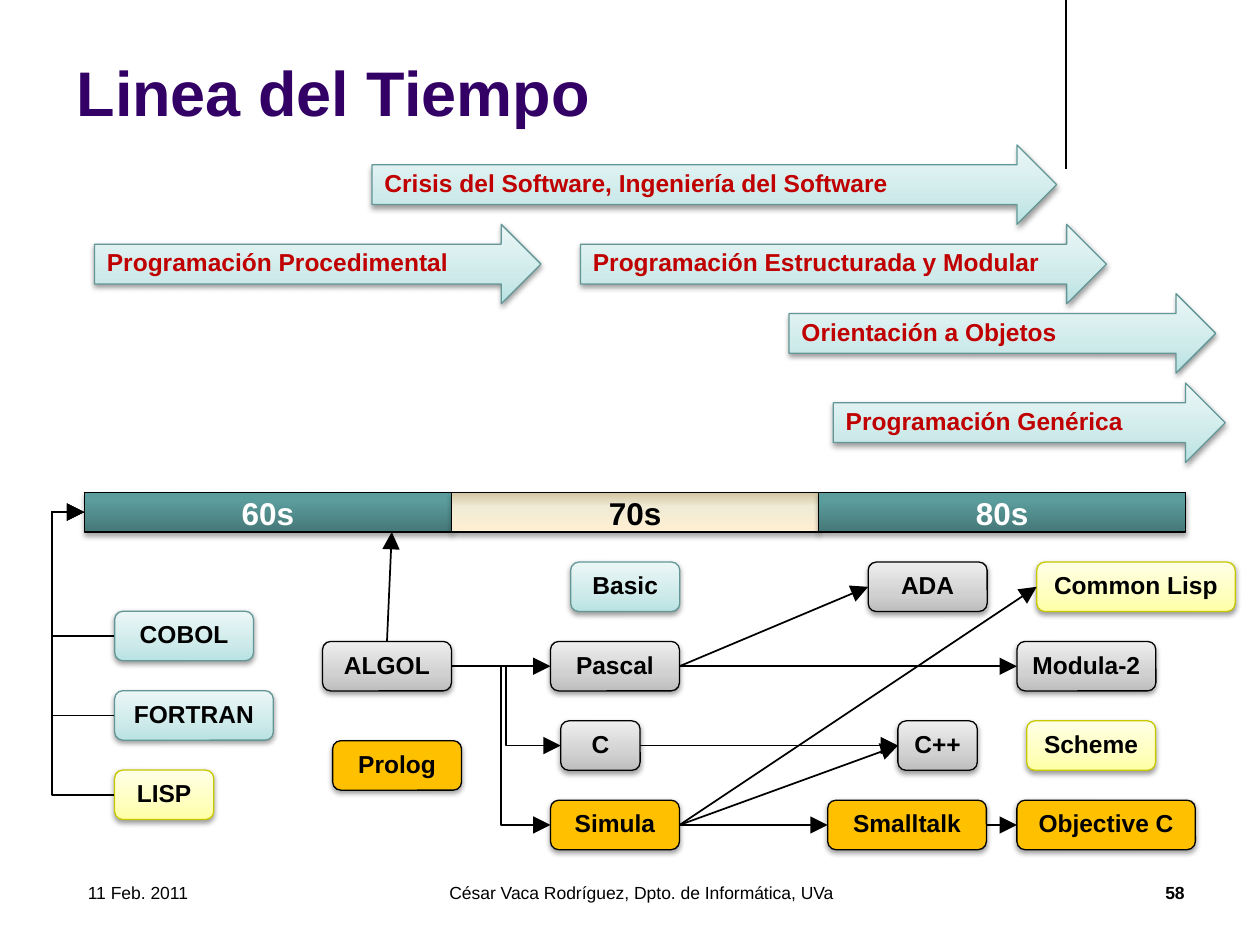
from copy import deepcopy

from pptx import Presentation
from pptx.dml.color import RGBColor
from pptx.enum.shapes import MSO_CONNECTOR as Link, MSO_SHAPE as Shape
from pptx.enum.text import MSO_ANCHOR as Anchor, PP_ALIGN as Align
from pptx.oxml.ns import qn
from pptx.oxml.xmlchemy import OxmlElement
from pptx.util import Pt

TOP, LEFT, BOTTOM, RIGHT = range(4)
TEAL = ([(0, "B9E2E2"), (0.35, "CEEAEA"), (1, "ECF7F7")], "639797")
GRAY = ([(0, "BDBDBD"), (0.35, "D1D1D1"), (1, "EEEEEE")], "000000")
YELLOW = ([(0, "FFFFA5"), (0.35, "FFFFBF"), (1, "FFFFE7")], "C8C800")
ORANGE = ("FFC000", "000000")
DARK_TEAL = ([(0, "467878"), (0.8, "5B9C9C"), (1, "5B9E9E")], "000000")
CREAM = ([(0, "FFEFD1"), (0.65, "F0EBD5"), (1, "D1C39F")], "000000")

PARADIGMS = [
    ("Crisis del Software, Ingeniería del Software", 158.6, 0, 391.2),
    ("Programación Procedimental", 0, 45.4, 255.1),
    ("Programación Estructurada y Modular", 277.7, 45.4, 300.5),
    ("Orientación a Objetos", 396.9, 85, 243.8),
    ("Programación Genérica", 422.2, 136.1, 223.9),
]
DECADES = [
    ("60s", DARK_TEAL, "FFFFFF"),
    ("70s", CREAM, "000000"),
    ("80s", DARK_TEAL, "FFFFFF"),
]
LANGUAGES = [
    ("COBOL", 0, 0.62, 79.4, TEAL),
    ("FORTRAN", 0, 1.62, 90.7, TEAL),
    ("LISP", 0, 2.62, 56.7, YELLOW),
    ("ALGOL", 118.8, 1, 73.7, GRAY),
    ("Prolog", 124.6, 2.25, 73.7, ORANGE),
    ("Basic", 260.6, 0, 62.4, TEAL),
    ("Pascal", 249.1, 1, 73.7, GRAY),
    ("C", 254.9, 2, 45.4, GRAY),
    ("Simula", 249.1, 3, 73.7, ORANGE),
    ("ADA", 430.6, 0, 68, GRAY),
    ("C++", 447.6, 2, 45.4, GRAY),
    ("Smalltalk", 407.5, 3, 90.7, ORANGE),
    ("Common Lisp", 526.9, 0, 113.4, YELLOW),
    ("Modula-2", 515.6, 1, 79.4, GRAY),
    ("Scheme", 521.2, 2, 73.7, YELLOW),
    ("Objective C", 515.6, 3, 102, ORANGE),
]
DESCENT = [
    ("ALGOL", "Pascal", Link.STRAIGHT),
    ("ALGOL", "C", Link.ELBOW),
    ("ALGOL", "Simula", Link.ELBOW),
    ("Pascal", "ADA", Link.STRAIGHT),
    ("Pascal", "Modula-2", Link.STRAIGHT),
    ("C", "C++", Link.STRAIGHT),
    ("Simula", "Smalltalk", Link.STRAIGHT),
    ("Simula", "C++", Link.STRAIGHT),
    ("Simula", "Common Lisp", Link.STRAIGHT),
    ("Smalltalk", "Objective C", Link.STRAIGHT),
]


def color(hex_code):
    return RGBColor.from_string(hex_code)


def child(parent, tag, **attributes):
    element = OxmlElement(tag)
    for name, value in attributes.items():
        element.set(name, str(value))
    parent.append(element)
    return element


def write(box, text, size, hex_code, bold=True, align=Align.LEFT, anchor=Anchor.MIDDLE):
    frame = box.text_frame
    frame.text = text
    frame.vertical_anchor = anchor
    para = frame.paragraphs[0]
    para.alignment = align
    font = para.runs[0].font
    font.name, font.size, font.bold = "Arial", Pt(size), bold
    font.color.rgb = color(hex_code)
    return para


def paint(shape, fill, line):
    shape.line.color.rgb = color(line)
    shape.line.width = Pt(0.75)
    if isinstance(fill, str):
        shape.fill.solid()
        shape.fill.fore_color.rgb = color(fill)
        return
    shape.fill.gradient()
    shape.fill.gradient_angle = 90
    stop_list = shape._element.spPr.find(qn("a:gradFill")).find(qn("a:gsLst"))
    stop_list.append(deepcopy(stop_list[-1]))
    for stop, (position, hex_code) in zip(shape.fill.gradient_stops, fill):
        stop.position = position
        stop.color.rgb = color(hex_code)


def add_shadow(shape, distance, opacity):
    shape.shadow.inherit = False
    effects = shape._element.spPr.find(qn("a:effectLst"))
    outer = child(effects, "a:outerShdw", blurRad=Pt(3.1), dist=Pt(distance),
                  dir=5400000, rotWithShape=0)
    child(child(outer, "a:srgbClr", val="000000"), "a:alpha", val=opacity * 1000)


def add_block(page, kind, box, style, text, size=14, hex_code="000000",
              align=Align.CENTER, anchor=Anchor.MIDDLE, distance=1.6, opacity=38):
    block = page.shapes.add_shape(kind, *map(Pt, box))
    paint(block, *style)
    add_shadow(block, distance, opacity)
    para = write(block, text, size, hex_code, align=align, anchor=anchor)
    para.line_spacing = 0.9
    block.text_frame.word_wrap = align == Align.LEFT
    return block


def add_line(page, kind=Link.STRAIGHT, ends=(0, 0, 0, 0), width=1, arrow=True):
    line = page.shapes.add_connector(kind, *map(Pt, ends))
    line.line.color.rgb = color("000000")
    line.line.width = Pt(width)
    if arrow:
        child(line.line._get_or_add_ln(), "a:tailEnd", type="triangle", w="lg", len="lg")
    child(line._element.spPr, "a:effectLst")
    return line


def join(page, start, start_side, end, end_side, kind=Link.STRAIGHT):
    line = add_line(page, kind)
    line.begin_connect(start, start_side)
    line.end_connect(end, end_side)
    return line


def add_label(page, box, text, size, hex_code, bold, align=Align.LEFT, inset=7.2):
    label = page.shapes.add_textbox(*map(Pt, box))
    label.text_frame.word_wrap = True
    label.text_frame.margin_left = Pt(inset)
    write(label, text, size, hex_code, bold, align)


def add_heading(page, left, top, width, height):
    add_line(page, ends=(609.1, 0, 609.1, 96.5), width=0.75, arrow=False)
    add_label(page, (left, top, width, height), "Linea del Tiempo", 36, "330066", True)


def add_footer(page, left, top, width, height):
    parts = [
        ("11 Feb. 2011", 0, 168, False, Align.LEFT),
        ("César Vaca Rodríguez, Dpto. de Informática, UVa", 182.2, 289.4, False, Align.CENTER),
        ("58", width - 168, 168, True, Align.RIGHT),
    ]
    for text, offset, part_width, bold, align in parts:
        add_label(page, (left + offset, top, part_width, height), text, 10, "000000",
                  bold, align, inset=14.2)


def add_paradigms(page, left, top):
    for text, x, y, width in PARADIGMS:
        add_block(page, Shape.RIGHT_ARROW, (left + x, top + y, width, 45.4), TEAL, text,
                  hex_code="C00000", align=Align.LEFT)


def add_timeline(page, left, top, width, height):
    step = width / len(DECADES)
    return [
        add_block(page, Shape.RECTANGLE, (left + i * step, top, step, height), style, text,
                  18, hex_code, anchor=Anchor.TOP, distance=1.8, opacity=35)
        for i, (text, style, hex_code) in enumerate(DECADES)
    ]


def add_languages(page, left, top, row_step, sixties):
    nodes = {
        name: add_block(page, Shape.ROUNDED_RECTANGLE,
                        (left + x, top + row * row_step, width, 28.3), style, name)
        for name, x, row, width, style in LANGUAGES
    }
    for name in ("COBOL", "FORTRAN", "LISP"):
        line = join(page, nodes[name], LEFT, sixties, LEFT, Link.ELBOW)
        guides = line._element.spPr.find(qn("a:prstGeom")).get_or_add_avLst()
        child(guides, "a:gd", name="adj1", fmla="val 205800")
    for parent, heir, kind in DESCENT:
        join(page, nodes[parent], RIGHT, nodes[heir], LEFT, kind)
    origin = add_line(page, ends=(221, 366.6, 223.9, 304))
    origin.begin_connect(nodes["ALGOL"], TOP)


def main():
    deck = Presentation()
    deck.slide_width, deck.slide_height = Pt(720), Pt(540)
    page = deck.slides.add_slide(deck.slide_layouts[6])
    add_heading(page, 36.7, 20.9, 561.6, 62.6)
    add_footer(page, 36, 491.8, 648, 36)
    add_paradigms(page, 54, 82.8)
    decades = add_timeline(page, 48.2, 281.3, 629.4, 22.7)
    add_languages(page, 65.5, 321.2, 45.36, decades[0])
    deck.save("out.pptx")


if __name__ == "__main__":
    main()
